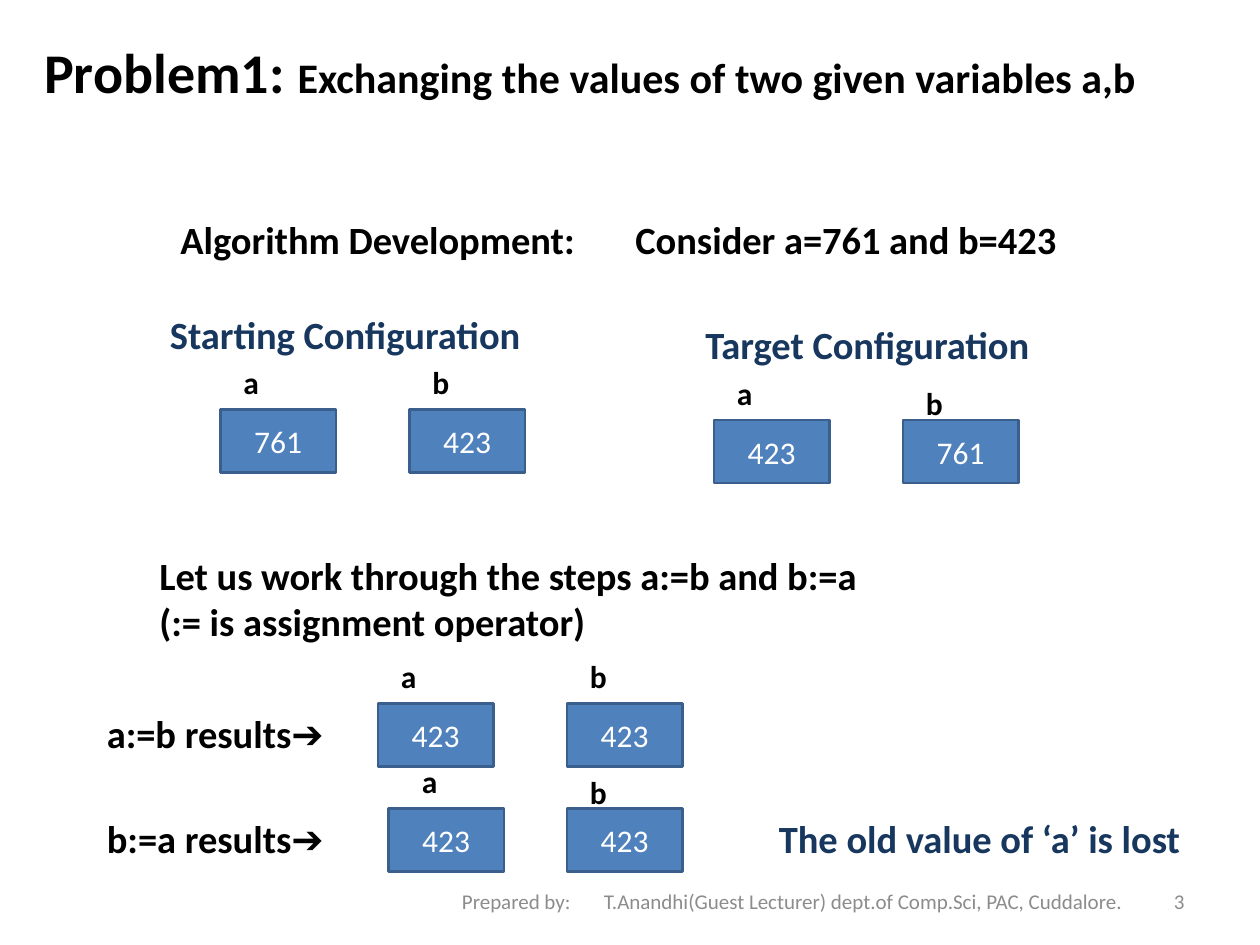
from dataclasses import dataclass

from lxml import etree
from pptx import Presentation
from pptx.dml.color import RGBColor
from pptx.enum.shapes import MSO_SHAPE
from pptx.enum.text import MSO_ANCHOR, MSO_AUTO_SIZE, PP_ALIGN
from pptx.oxml.ns import qn
from pptx.slide import Slide
from pptx.text.text import TextFrame
from pptx.util import Pt

RECTANGLE = MSO_SHAPE.RECTANGLE
TOP, MIDDLE = MSO_ANCHOR.TOP, MSO_ANCHOR.MIDDLE
LEFT, CENTER, RIGHT = PP_ALIGN.LEFT, PP_ALIGN.CENTER, PP_ALIGN.RIGHT
NO_AUTOFIT = MSO_AUTO_SIZE.NONE


@dataclass(frozen=True)
class Theme:
    font: str = "Calibri"
    black: str = "000000"
    navy: str = "17375E"
    white: str = "FFFFFF"
    gray: str = "8C8C8C"
    box_fill: str = "4F81BD"
    box_line: str = "3A5F8C"
    title_size: int = 32
    subtitle_size: int = 24
    body_size: int = 22
    value_size: int = 18
    footer_size: int = 12


THEME = Theme()


@dataclass(frozen=True)
class Style:
    size: int
    color: str
    bold: bool = True


BODY = Style(THEME.body_size, THEME.black)
ACCENT = Style(THEME.body_size, THEME.navy)
LABEL = Style(THEME.value_size, THEME.black)
VALUE = Style(THEME.value_size, THEME.white, False)
FOOTER = Style(THEME.footer_size, THEME.gray, False)


@dataclass(frozen=True)
class Caption:
    left: float
    top: float
    width: float
    height: float
    lines: tuple[str, ...]
    style: Style = BODY
    align: PP_ALIGN = LEFT
    anchor: MSO_ANCHOR = TOP
    inset: float = 7.2
    tab_stop: float = 0


@dataclass(frozen=True)
class Variable:
    name: str
    value: str
    left: float
    top: float
    label_right: float = 6
    label_up: float = 30


CAPTIONS = (
    Caption(96, 120, 558, 60, ("Algorithm Development:\tConsider a=761 and b=423",), tab_stop=260),
    Caption(90, 174, 252, 34, ("Starting Configuration",), ACCENT),
    Caption(396, 180, 240, 34, ("Target Configuration",), ACCENT),
    Caption(84, 312, 516, 87,
            ("Let us work through the steps a:=b and b:=a", "(:= is assignment operator)")),
    Caption(54, 402, 144, 34, ("a:=b results➔",)),
    Caption(54, 462, 144, 34, ("b:=a results➔",)),
    Caption(438, 462, 252, 34, ("The old value of ‘a’ is lost",), ACCENT),
    Caption(516, 500.5, 168, 29, ("3",), FOOTER, RIGHT, MIDDLE),
    Caption(246, 500.5, 414, 29,
            ("Prepared by:\tT.Anandhi(Guest Lecturer) dept.of Comp.Sci, PAC, Cuddalore.",),
            FOOTER, anchor=MIDDLE, inset=18, tab_stop=81),
)

VARIABLES = (
    Variable("a", "761", 126, 234),
    Variable("b", "423", 234, 234),
    Variable("a", "423", 408, 240),
    Variable("b", "761", 516, 240, label_up=24),
    Variable("a", "423", 216, 402),
    Variable("b", "423", 324, 402),
    Variable("a", "423", 222, 462, label_right=12),
    Variable("b", "423", 324, 462, label_up=24),
)


def add_run(paragraph, text: str, style: Style) -> None:
    run = paragraph.add_run()
    run.text = text
    run.font.name = THEME.font
    run.font.size = Pt(style.size)
    run.font.bold = style.bold
    run.font.color.rgb = RGBColor.from_string(style.color)


def add_tab_stop(paragraph, position: float) -> None:
    properties = paragraph._p.get_or_add_pPr()
    tab_list = etree.SubElement(properties, qn("a:tabLst"))
    etree.SubElement(tab_list, qn("a:tab"), pos=str(Pt(position)), algn="l")


def write_lines(text_frame: TextFrame, caption: Caption) -> None:
    text_frame.word_wrap = True
    text_frame.vertical_anchor = caption.anchor
    text_frame.margin_left = Pt(caption.inset)
    for index, line in enumerate(caption.lines):
        paragraph = text_frame.add_paragraph() if index else text_frame.paragraphs[0]
        paragraph.alignment = caption.align
        if caption.tab_stop:
            add_tab_stop(paragraph, caption.tab_stop)
        add_run(paragraph, line, caption.style)


def add_caption(slide: Slide, caption: Caption) -> None:
    shape = slide.shapes.add_textbox(
        Pt(caption.left), Pt(caption.top), Pt(caption.width), Pt(caption.height))
    write_lines(shape.text_frame, caption)


def add_variable(slide: Slide, variable: Variable) -> None:
    box = Caption(variable.left, variable.top, 66, 36, (variable.value,), VALUE, CENTER, MIDDLE)
    shape = slide.shapes.add_shape(
        RECTANGLE, Pt(box.left), Pt(box.top), Pt(box.width), Pt(box.height))
    shape.shadow.inherit = False
    shape.fill.solid()
    shape.fill.fore_color.rgb = RGBColor.from_string(THEME.box_fill)
    shape.line.color.rgb = RGBColor.from_string(THEME.box_line)
    shape.line.width = Pt(1.5)
    write_lines(shape.text_frame, box)
    add_caption(slide, Caption(variable.left + variable.label_right,
                               variable.top - variable.label_up, 36, 29, (variable.name,), LABEL))


def add_title(slide: Slide) -> None:
    title = slide.shapes.title
    title.left, title.top, title.width, title.height = Pt(18), Pt(18), Pt(678), Pt(46)
    title.text_frame.auto_size = NO_AUTOFIT
    title.text_frame.vertical_anchor = TOP
    paragraph = title.text_frame.paragraphs[0]
    paragraph.alignment = LEFT
    add_run(paragraph, "Problem1: ", Style(THEME.title_size, THEME.black))
    add_run(paragraph, "Exchanging the values of two given variables a,b",
            Style(THEME.subtitle_size, THEME.black))


def main() -> None:
    presentation = Presentation()
    presentation.slide_width, presentation.slide_height = Pt(720), Pt(540)
    slide = presentation.slides.add_slide(presentation.slide_layouts.get_by_name("Title Only"))
    add_title(slide)
    for variable in VARIABLES:
        add_variable(slide, variable)
    for caption in CAPTIONS:
        add_caption(slide, caption)
    presentation.save("out.pptx")


if __name__ == "__main__":
    main()
